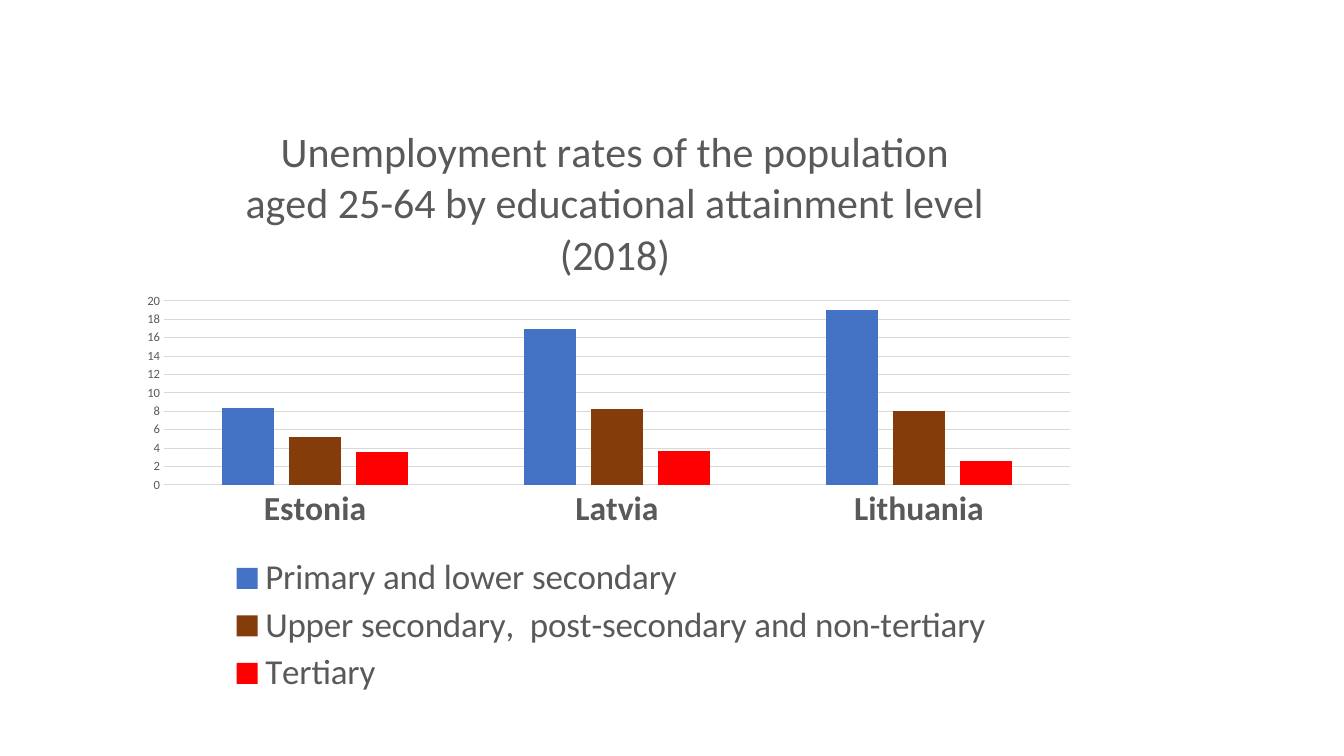
import dataclasses

import pptx
import pptx.chart.data
import pptx.dml.color
import pptx.enum.chart
import pptx.oxml
import pptx.oxml.ns
import pptx.util


@dataclasses.dataclass(frozen=True)
class Theme:
    font: str = "Calibri"
    text: str = "595959"
    rule: str = "D9D9D9"
    series: tuple = ("4472C4", "843C0B", "FF0000")
    base_size: int = 10
    title_size: int = 30
    legend_size: int = 25
    category_size: int = 24
    value_size: int = 9
    rule_width: float = 0.75


COUNTRIES = ("Estonia", "Latvia", "Lithuania")
RATES = {
    "Primary and lower secondary": (8.4, 17, 19),
    "Upper secondary,  post-secondary and non-tertiary": (5.2, 8.3, 8),
    "Tertiary": (3.6, 3.7, 2.6),
}
HEADING = "Unemployment rates of the population aged 25-64 by educational attainment level (2018)"


class SlideBuilder:
    PX_PER_INCH = 100.8

    def __init__(self, theme, width, height):
        self.theme = theme
        self.deck = pptx.Presentation()
        self.deck.slide_width = self.emu(width)
        self.deck.slide_height = self.emu(height)
        self.slide = self.deck.slides.add_slide(self.deck.slide_layouts[6])

    def emu(self, px):
        return pptx.util.Emu(round(px * 914400 / self.PX_PER_INCH))

    def color(self, value):
        return pptx.dml.color.RGBColor.from_string(value)

    def set_font(self, font, size, bold=False):
        font.name = self.theme.font
        font.size = pptx.util.Pt(size)
        font.bold = bold
        font.color.rgb = self.color(self.theme.text)

    def set_rule(self, line):
        line.color.rgb = self.color(self.theme.rule)
        line.width = pptx.util.Pt(self.theme.rule_width)

    def column_chart(self, box, categories, values):
        data = pptx.chart.data.CategoryChartData()
        data.categories = categories
        for name, rates in values.items():
            data.add_series(name, rates)
        chart = self.slide.shapes.add_chart(
            pptx.enum.chart.XL_CHART_TYPE.COLUMN_CLUSTERED,
            *map(self.emu, box), data).chart
        self.set_font(chart.font, self.theme.base_size)
        plot = chart.plots[0]
        plot.gap_width = 219
        plot.overlap = -27
        plot.vary_by_categories = False
        for series, fill in zip(plot.series, self.theme.series):
            series.format.fill.solid()
            series.format.fill.fore_color.rgb = self.color(fill)
            series.invert_if_negative = False
        return chart

    def axes(self, chart, maximum, step):
        for axis in (chart.category_axis, chart.value_axis):
            axis.major_tick_mark = pptx.enum.chart.XL_TICK_MARK.NONE
            axis.minor_tick_mark = pptx.enum.chart.XL_TICK_MARK.NONE
        countries, rates = chart.category_axis, chart.value_axis
        self.set_font(countries.tick_labels.font, self.theme.category_size, True)
        self.set_rule(countries.format.line)
        self.set_font(rates.tick_labels.font, self.theme.value_size)
        rates.format.line.fill.background()
        rates.has_major_gridlines = True
        self.set_rule(rates.major_gridlines.format.line)
        rates.minimum_scale = 0
        rates.maximum_scale = maximum
        rates.major_unit = step

    def heading(self, chart, text):
        chart.has_title = True
        frame = chart.chart_title.text_frame
        frame.text = text
        self.set_font(frame.paragraphs[0].font, self.theme.title_size)

    def legend(self, chart):
        chart.has_legend = True
        chart.legend.position = pptx.enum.chart.XL_LEGEND_POSITION.BOTTOM
        chart.legend.include_in_layout = False
        self.set_font(chart.legend.font, self.theme.legend_size)

    def place(self, chart, tag, chart_box, left, top, width=None, height=None):
        qn = pptx.oxml.ns.qn
        part = chart.element.find(".//" + qn(tag))
        for automatic in part.findall(qn("c:layout")):
            part.remove(automatic)
        inner = '<c:layoutTarget val="inner"/>' if tag == "c:plotArea" else ""
        chart_left, chart_top, chart_width, chart_height = chart_box
        shares = {"x": (left - chart_left) / chart_width,
                  "y": (top - chart_top) / chart_height}
        if width:
            shares.update(w=width / chart_width, h=height / chart_height)
        modes = '<c:xMode val="edge"/><c:yMode val="edge"/>'
        sizes = "".join(f'<c:{key} val="{share:.4f}"/>' for key, share in shares.items())
        layout = pptx.oxml.parse_xml(
            f'<c:layout {pptx.oxml.ns.nsdecls("c")}><c:manualLayout>'
            f"{inner}{modes}{sizes}</c:manualLayout></c:layout>")
        overlay = part.find(qn("c:overlay"))
        if overlay is None:
            part.insert(0, layout)
        else:
            overlay.addprevious(layout)


def main():
    builder = SlideBuilder(Theme(), 1344, 756)
    chart_box = (128, 85, 961, 619)
    unemployment = builder.column_chart(chart_box, COUNTRIES, RATES)
    builder.axes(unemployment, 20, 2)
    builder.heading(unemployment, HEADING)
    builder.legend(unemployment)
    builder.place(unemployment, "c:title", chart_box, 238, 115)
    builder.place(unemployment, "c:plotArea", chart_box, 164, 301, 906, 184)
    builder.place(unemployment, "c:legend", chart_box, 226, 552, 770, 148)
    builder.deck.save("out.pptx")


if __name__ == "__main__":
    main()
